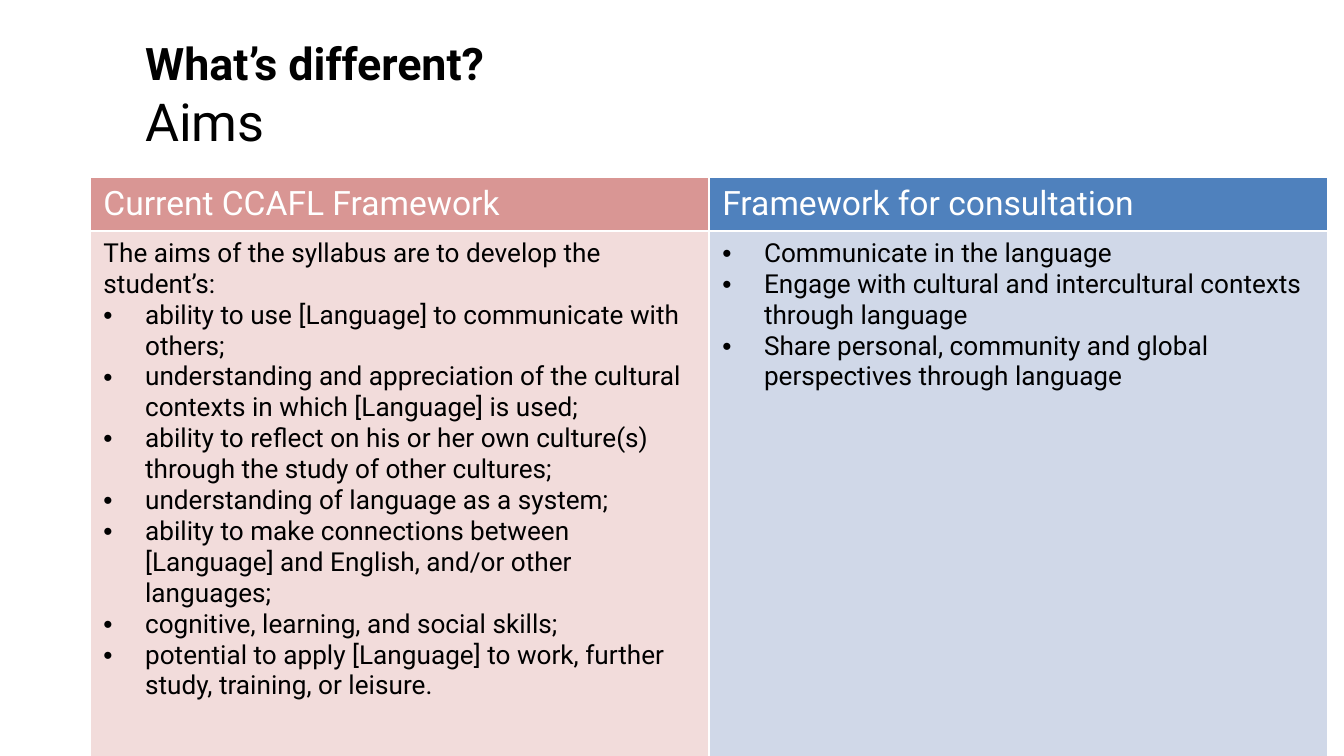
from pptx import Presentation
from pptx.dml.color import RGBColor
from pptx.enum.text import MSO_ANCHOR, MSO_AUTO_SIZE, PP_ALIGN
from pptx.oxml import parse_xml
from pptx.oxml.ns import nsdecls
from pptx.util import Inches, Pt

LEFT, MIDDLE = PP_ALIGN.LEFT, MSO_ANCHOR.MIDDLE
FIT = MSO_AUTO_SIZE.SHAPE_TO_FIT_TEXT
TITLE_ONLY = 5

FONT = "Roboto"
BLACK = RGBColor(0x00, 0x00, 0x00)
WHITE = RGBColor(0xFF, 0xFF, 0xFF)
ROSE = RGBColor(0xD9, 0x96, 0x94)
PINK = RGBColor(0xF2, 0xDC, 0xDB)
BLUE = RGBColor(0x4F, 0x81, 0xBD)
PALE = RGBColor(0xD0, 0xD8, 0xE8)

INDENT = Inches(0.31)
WIDTH = 9.21
ROWS = (0.39, 3.91)

# Each column: heading, heading fill, body fill, lead line, bullets
COLUMNS = [
    ("Current CCAFL Framework", ROSE, PINK,
     ["The aims of the syllabus are to develop the student’s:"],
     ["ability to use [Language] to communicate with others;",
      "understanding and appreciation of the cultural contexts in which "
      "[Language] is used;",
      "ability to reflect on his or her own culture(s) through the study "
      "of other cultures;",
      "understanding of language as a system;",
      "ability to make connections between [Language] and English, "
      "and/or other languages;",
      "cognitive, learning, and social skills;",
      "potential to apply [Language] to work, further study, training, "
      "or leisure."]),
    ("Framework for consultation", BLUE, PALE, [],
     ["Communicate in the language",
      "Engage with cultural and intercultural contexts through language",
      "Share personal, community and global perspectives through language"]),
]


def style(font, size, color, bold=False):
    font.name, font.size, font.bold = FONT, Pt(size), bold
    font.color.rgb = color


def add_bullet(para):
    props = para._p.get_or_add_pPr()
    props.set("marL", str(INDENT))
    props.set("indent", str(-INDENT))
    for mark in ('buFont {} typeface="Arial"', 'buChar {} char="•"'):
        props.append(parse_xml(f'<a:{mark.format(nsdecls("a"))}/>'))


def add_title(slide):
    title = slide.shapes.title
    title.left, title.top = Inches(0.98), Inches(0.21)
    title.width, title.height = Inches(5), Inches(0.98)
    frame = title.text_frame
    frame.word_wrap, frame.auto_size = True, FIT
    frame.vertical_anchor = MIDDLE
    para = frame.paragraphs[0]
    para.alignment, para.line_spacing = LEFT, 1.0
    head = para.add_run()
    head.text = "What’s different? "
    style(head.font, 24, BLACK, True)
    para.add_line_break()
    topic = para.add_run()
    topic.text = "Aims"
    style(topic.font, 28, BLACK)


def add_borders(cell):
    props = cell._tc.get_or_add_tcPr()
    for side in ("lnL", "lnR", "lnT", "lnB"):
        props.append(parse_xml(
            f'<a:{side} {nsdecls("a")} w="{Pt(1)}"><a:solidFill>'
            f'<a:srgbClr val="{WHITE}"/></a:solidFill></a:{side}>'))


def fill_cell(cell, fill, size, color, plain, bullets=()):
    add_borders(cell)
    cell.fill.solid()
    cell.fill.fore_color.rgb = fill
    cell.text = "\n".join([*plain, *bullets])
    for i, para in enumerate(cell.text_frame.paragraphs):
        if i >= len(plain):
            add_bullet(para)
        style(para.font, size, color)


def add_grid(slide):
    table = slide.shapes.add_table(
        len(ROWS), len(COLUMNS), Inches(0.67), Inches(1.32),
        Inches(WIDTH), Inches(sum(ROWS))).table
    for row, height in zip(table.rows, ROWS):
        row.height = Inches(height)
    for i, (head, dark, light, lead, bullets) in enumerate(COLUMNS):
        table.columns[i].width = Inches(WIDTH / len(COLUMNS))
        fill_cell(table.cell(0, i), dark, 18, WHITE, [head])
        fill_cell(table.cell(1, i), light, 14, BLACK, lead, bullets)


def main():
    deck = Presentation()
    # Widescreen, 16 to 9
    deck.slide_width = Inches(10)
    deck.slide_height = Inches(10) * 9 // 16
    slide = deck.slides.add_slide(deck.slide_layouts[TITLE_ONLY])
    add_title(slide)
    add_grid(slide)
    deck.save("out.pptx")


if __name__ == "__main__":
    main()
